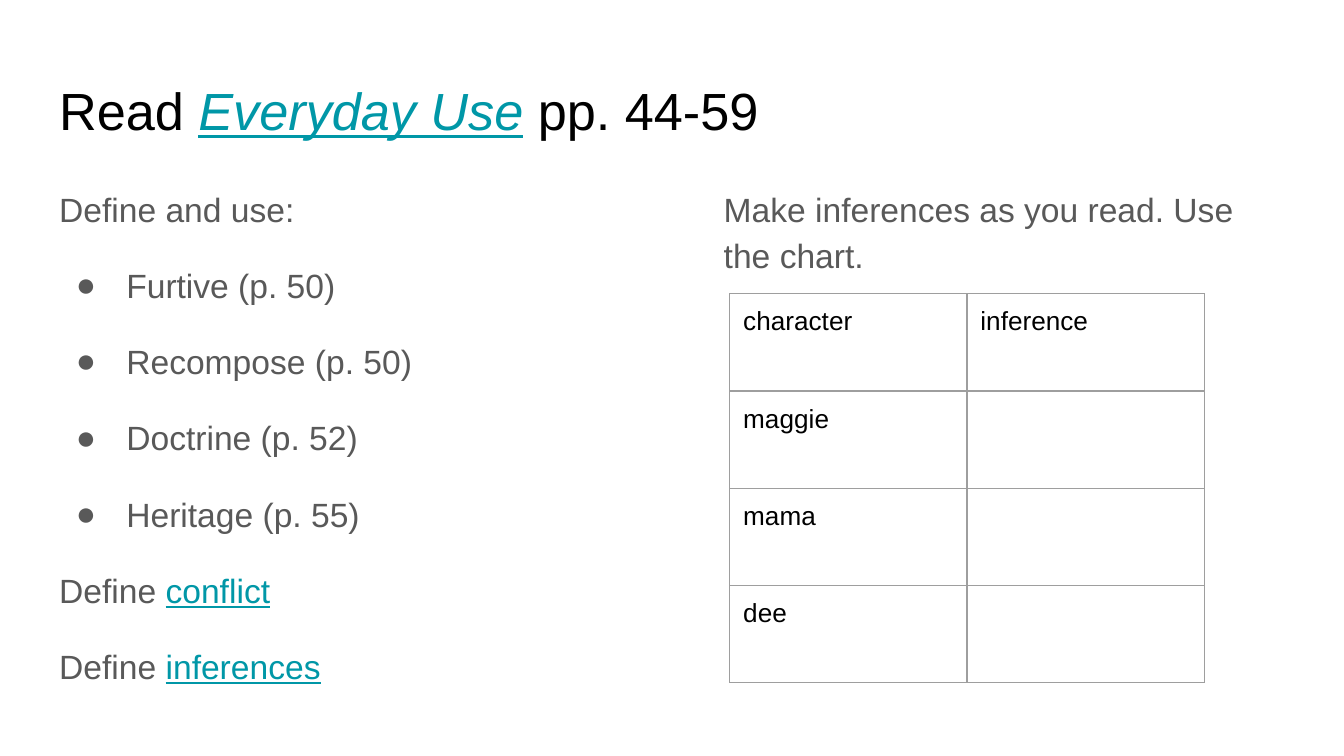
from dataclasses import dataclass

from lxml.etree import SubElement as Sub
from pptx import Presentation
from pptx.dml.color import RGBColor
from pptx.enum.text import MSO_ANCHOR as Anchor, MSO_AUTO_SIZE as Fit, PP_ALIGN as Align
from pptx.oxml.ns import qn
from pptx.util import Pt

PX = 4572
FONT = "Arial"
BLACK = RGBColor(0x00, 0x00, 0x00)
GREY = RGBColor(0x59, 0x59, 0x59)
TEAL = RGBColor(0x00, 0x97, 0xA7)
RULE = RGBColor(0x9E, 0x9E, 0x9E)


@dataclass
class Span:
    text: str
    link: bool = False
    slant: bool = False


@dataclass
class Line:
    spans: list[Span]
    dot: bool = False


@dataclass
class Box:
    left: int
    top: int
    width: int
    height: int

    def emu(self) -> list[int]:
        return [v * PX for v in (self.left, self.top, self.width, self.height)]


def style(par, size: int, color: RGBColor) -> None:
    par.font.name = FONT
    par.font.size = Pt(size)
    par.font.color.rgb = color


def mark(par, dot: bool) -> None:
    props = par._p.get_or_add_pPr()
    props.set("marL", str(100 * PX if dot else 0))
    props.set("indent", str(-75 * PX if dot else 0))
    if dot:
        tint = Sub(props, qn("a:buClr"))
        Sub(tint, qn("a:srgbClr"), val=str(GREY))
        Sub(props, qn("a:buFont"), typeface=FONT)
        Sub(props, qn("a:buChar"), char="●")
    else:
        Sub(props, qn("a:buNone"))


def pad(item) -> None:
    item.margin_left = item.margin_right = 20 * PX
    item.margin_top = item.margin_bottom = 20 * PX


def write(holder, box: Box, lines: list[Line], size: int, color: RGBColor,
          lead: float = 1.0, gap: int = 0) -> None:
    holder.left, holder.top, holder.width, holder.height = box.emu()
    frame = holder.text_frame
    pad(frame)
    frame.word_wrap = True
    frame.auto_size = Fit.NONE
    frame.vertical_anchor = Anchor.TOP
    for i, line in enumerate(lines):
        par = frame.add_paragraph() if i else frame.paragraphs[0]
        par.alignment = Align.LEFT
        par.line_spacing = lead
        par.space_before = Pt(0)
        par.space_after = Pt(gap)
        mark(par, line.dot)
        style(par, size, color)
        for span in line.spans:
            run = par.add_run()
            run.text = span.text
            if span.slant:
                run.font.italic = True
            if span.link:
                run.font.underline = True
                run.font.color.rgb = TEAL


def edge(cell) -> None:
    props = cell._tc.get_or_add_tcPr()
    for side in ("lnL", "lnR", "lnT", "lnB"):
        line = Sub(props, qn(f"a:{side}"), w=str(Pt(0.75)))
        fill = Sub(line, qn("a:solidFill"))
        Sub(fill, qn("a:srgbClr"), val=str(RULE))


def grid(slide, box: Box, rows: list[tuple[str, str]]) -> None:
    table = slide.shapes.add_table(len(rows), len(rows[0]), *box.emu()).table
    table.first_row = table.horz_banding = False
    for r, row in enumerate(rows):
        for c, text in enumerate(row):
            cell = table.cell(r, c)
            pad(cell)
            edge(cell)
            cell.fill.background()
            cell.text = text
            style(cell.text_frame.paragraphs[0], 14, BLACK)


def main() -> None:
    deck = Presentation()
    deck.slide_width, deck.slide_height = 2000 * PX, 1125 * PX
    slide = deck.slides.add_slide(deck.slide_layouts[3])
    title, words, task = slide.placeholders

    head = [Span("Read "), Span("Everyday Use", True, True),
            Span(" ", slant=True), Span("pp. 44-59")]
    write(title, Box(68, 97, 1864, 125), [Line(head)], 28, BLACK)

    terms = ["Furtive (p. 50)", "Recompose (p. 50)", "Doctrine (p. 52)", "Heritage (p. 55)"]
    lines = [Line([Span("Define and use:")])]
    lines += [Line([Span(term)], True) for term in terms]
    lines += [Line([Span("Define "), Span(word, True)]) for word in ("conflict", "inferences")]
    write(words, Box(68, 252, 875, 747), lines, 18, GREY, 1.15, 16)

    note = [Line([Span("Make inferences as you read. Use the chart.")])]
    write(task, Box(1057, 252, 875, 747), note, 18, GREY, 1.15, 16)

    rows = [("character", "inference"), ("maggie", ""), ("mama", ""), ("dee", "")]
    grid(slide, Box(1086, 437, 706, 579), rows)
    deck.save("out.pptx")


if __name__ == "__main__":
    main()
